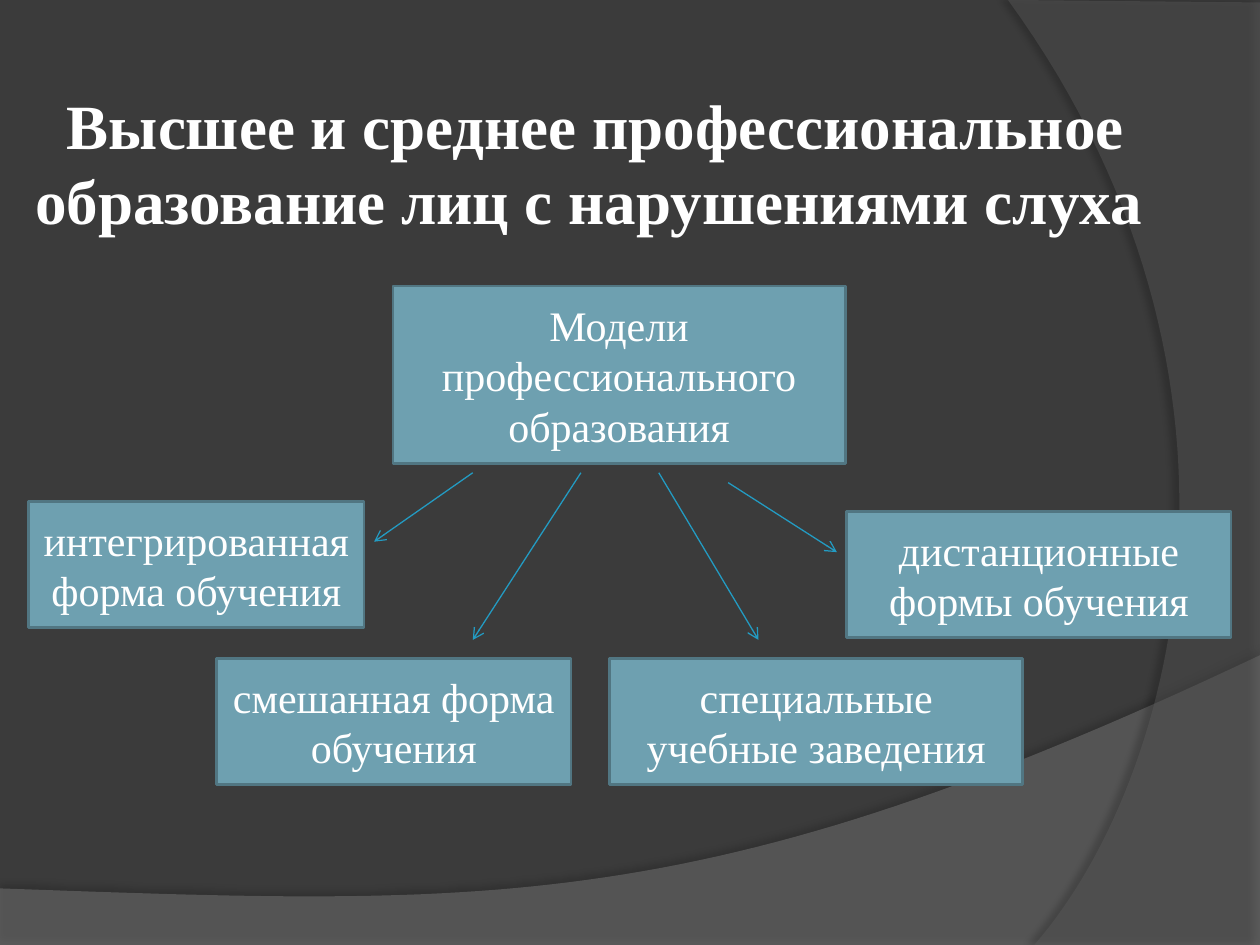
from lxml import etree
from pptx import Presentation
from pptx.dml.color import RGBColor
from pptx.enum.shapes import MSO_CONNECTOR, MSO_SHAPE
from pptx.enum.text import MSO_ANCHOR, PP_ALIGN
from pptx.oxml.ns import qn
from pptx.util import Cm, Pt

RECTANGLE = MSO_SHAPE.RECTANGLE
STRAIGHT = MSO_CONNECTOR.STRAIGHT
MIDDLE = MSO_ANCHOR.MIDDLE
LEFT, CENTER = PP_ALIGN.LEFT, PP_ALIGN.CENTER
FONT = "Times New Roman"
CURVE_STEPS = 60

# Content; all lengths in centimetres
TITLE = "Высшее и среднее профессиональное образование лиц с нарушениями слуха"
TITLE_BOX = (0.58, 0.76, 24.82, 5)
BOXES = [  # text, (left, top, width, height)
    ("Модели профессионального образования", (7.92, 5.77, 9.12, 3.58)),
    ("интегрированная форма обучения", (0.58, 10.11, 6.76, 2.54)),
    ("смешанная форма обучения", (4.37, 13.28, 7.14, 2.54)),
    ("специальные учебные заведения", (12.29, 13.28, 8.33, 2.54)),
    ("дистанционные формы обучения", (17.07, 10.31, 7.75, 2.54)),
]
ARROWS = [  # start x, start y, end x, end y
    (11.71, 9.53, 9.53, 12.9),
    (13.28, 9.53, 15.29, 12.9),
    (9.53, 9.53, 7.54, 10.92),
    (14.68, 9.73, 16.87, 11.13),
]
WAVES = [  # corners, Bezier curve, fill, opacity, shadow opacity, distance, angle
    ([(0, 19.05), (25.4, 19.05)],
     [(25.4, 13.21), (14.2, 18.52), (9.93, 18.26), (0, 17.91)],
     "7F7F7F", 45, 35, 3.5, 270),
    ([(25.4, 0.05), (25.4, 19.05)],
     [(20.85, 19.05), (23.75, 15.72), (25.86, 7.62), (20.32, 0)],
     "5E5E5E", 40, 45, 4, 180),
]


def color(value):
    return RGBColor.from_string(value)


def add_alpha(parent, percent):
    etree.SubElement(parent, qn("a:alpha"), val=str(percent * 1000))


def curve_points(curve):
    points = []
    for step in range(CURVE_STEPS + 1):
        t = step / CURVE_STEPS
        weights = ((1 - t) ** 3, 3 * t * (1 - t) ** 2, 3 * t * t * (1 - t), t ** 3)
        points.append(tuple(sum(w * p[axis] for w, p in zip(weights, curve))
                            for axis in (0, 1)))
    return points


def add_wave(slide, corners, curve, fill, opacity, shadow_opacity, distance, angle):
    points = [(Cm(x), Cm(y)) for x, y in corners + curve_points(curve)]
    builder = slide.shapes.build_freeform(*points[0])
    builder.add_line_segments(points[1:])
    shape = builder.convert_to_shape()
    shape.line.fill.background()
    shape.fill.solid()
    shape.fill.fore_color.rgb = color(fill)
    properties = shape.element.spPr
    add_alpha(properties.find(".//" + qn("a:solidFill"))[0], opacity)
    # Soft edge shadow
    shape.shadow.inherit = False
    shadow = etree.SubElement(
        properties.find(qn("a:effectLst")), qn("a:outerShdw"), blurRad=str(Pt(4)),
        dist=str(Pt(distance)), dir=str(angle * 60000), rotWithShape="0")
    add_alpha(etree.SubElement(shadow, qn("a:srgbClr"), val="000000"), shadow_opacity)


def set_text(shape, text, size, alignment, bold=False):
    frame = shape.text_frame
    frame.text = text
    frame.word_wrap = True
    frame.vertical_anchor = MIDDLE
    paragraph = frame.paragraphs[0]
    paragraph.alignment = alignment
    font = paragraph.runs[0].font
    font.name, font.size, font.bold = FONT, Pt(size), bold
    font.color.rgb = color("FFFFFF")
    return paragraph


def add_title(slide):
    box = slide.shapes.add_textbox(*map(Cm, TITLE_BOX))
    frame = box.text_frame
    frame.margin_left = frame.margin_right = Cm(0.13)
    frame.margin_top = frame.margin_bottom = Cm(0.13)
    paragraph = set_text(box, TITLE, 36, LEFT, bold=True)
    paragraph._p.get_or_add_pPr().set("indent", str(Cm(0.64)))


def add_box(slide, text, place):
    shape = slide.shapes.add_shape(RECTANGLE, *map(Cm, place))
    shape.shadow.inherit = False
    shape.fill.solid()
    shape.fill.fore_color.rgb = color("6EA0B0")
    shape.line.color.rgb = color("517682")
    shape.line.width = Pt(1.5)
    set_text(shape, text, 24, CENTER)


def add_arrow(slide, ends):
    connector = slide.shapes.add_connector(STRAIGHT, *map(Cm, ends))
    connector.line.color.rgb = color("239BC2")
    connector.line.width = Pt(0.75)
    properties = connector.element.spPr
    etree.SubElement(properties.find(qn("a:ln")), qn("a:tailEnd"), type="arrow")
    etree.SubElement(properties, qn("a:effectLst"))


def main():
    presentation = Presentation()
    presentation.slide_width, presentation.slide_height = Cm(25.4), Cm(19.05)
    slide = presentation.slides.add_slide(presentation.slide_layouts[6])
    slide.background.fill.solid()
    slide.background.fill.fore_color.rgb = color("3B3B3B")

    # Background waves, title, then the diagram
    for wave in WAVES:
        add_wave(slide, *wave)
    add_title(slide)
    for text, place in BOXES:
        add_box(slide, text, place)
    for ends in ARROWS:
        add_arrow(slide, ends)
    presentation.save("out.pptx")


if __name__ == "__main__":
    main()
